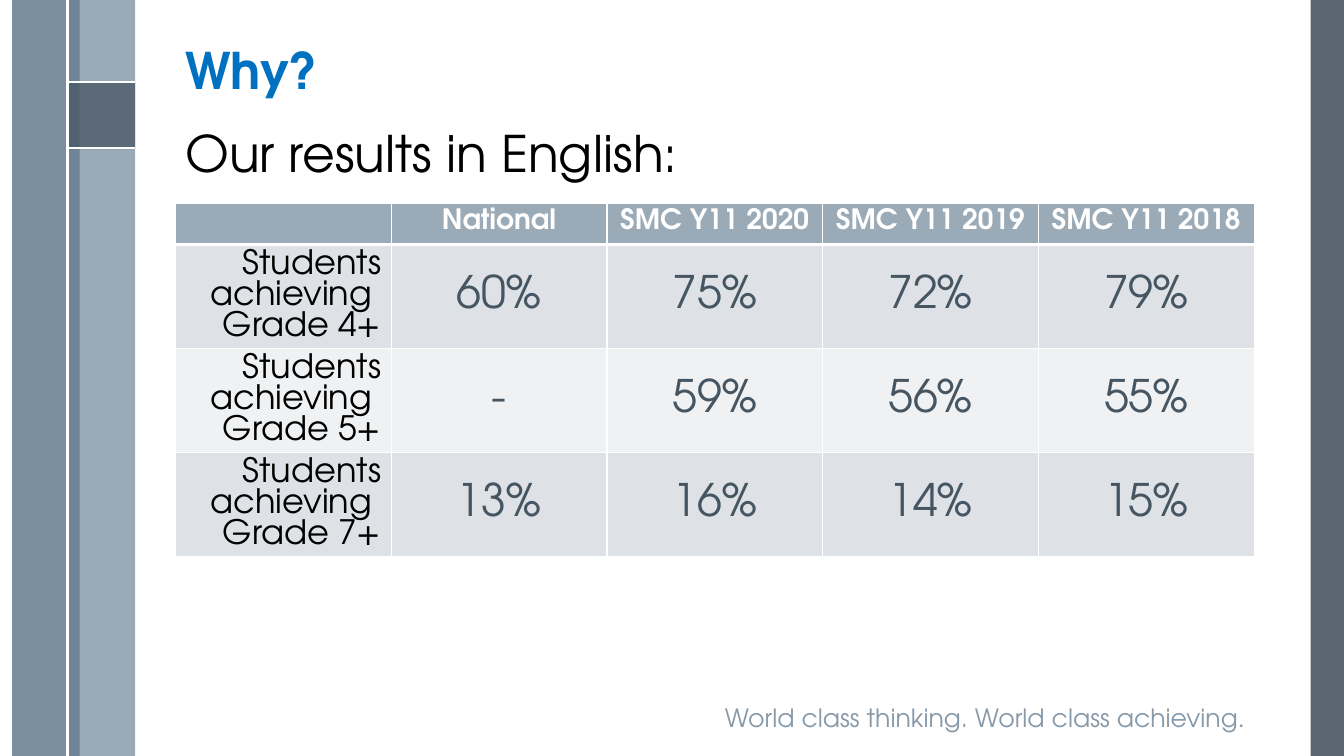
from typing import NamedTuple

from lxml import etree
from pptx import Presentation
from pptx.dml.color import RGBColor
from pptx.enum import shapes, text
from pptx.oxml import ns
from pptx.util import Inches, Pt

FONT = "TeX Gyre Adventor"
WHITE = RGBColor(0xFF, 0xFF, 0xFF)
BLACK = RGBColor(0, 0, 0)
BLUE = RGBColor(0x00, 0x70, 0xC0)
SLATE = RGBColor(0x47, 0x55, 0x62)
STEEL = RGBColor(0x6A, 0x80, 0x93)
MIST = RGBColor(0x9B, 0xAA, 0xB7)
MOTTO_GREY = RGBColor(0x87, 0x9A, 0xAA)
VALUE_GREY = RGBColor(0x46, 0x55, 0x62)
BAND_DARK = RGBColor(0xDE, 0xE2, 0xE6)
BAND_LIGHT = RGBColor(0xEF, 0xF1, 0xF3)

LEFT, WIDTH = 1.74, 10.7
HEADER_HEIGHT, ROW_HEIGHT = 0.36, 1.03


class Panel(NamedTuple):
    x: float
    y: float
    w: float
    h: float
    color: RGBColor
    opacity: int = 100


class Rule(NamedTuple):
    x1: float
    y1: float
    x2: float
    y2: float


class Style(NamedTuple):
    size: int
    color: RGBColor
    bold: bool = False
    align: text.PP_ALIGN = text.PP_ALIGN.LEFT


PANELS = [
    Panel(13, 0, 0.33, 7.5, SLATE, 90),
    Panel(0.67, 0, 0.67, 7.5, MIST),
    Panel(0.12, 0, 0.67, 7.5, STEEL, 88),
    Panel(0.67, 0.81, 0.67, 0.67, SLATE, 75),
]
RULES = [Rule(0.67, 0.81, 1.34, 0.81), Rule(0.67, 1.47, 1.34, 1.47), Rule(0.67, 0, 0.67, 7.5)]

HEADER = Style(20, WHITE, True, text.PP_ALIGN.CENTER)
ROW_LABEL = Style(24, BLACK, align=text.PP_ALIGN.RIGHT)
VALUE = Style(32, VALUE_GREY, align=text.PP_ALIGN.CENTER)

RESULTS = [
    ["", "National", "SMC Y11 2020", "SMC Y11 2019", "SMC Y11 2018"],
    ["Students achieving \nGrade 4+", "60%", "75%", "72%", "79%"],
    ["Students achieving \nGrade 5+", "-", "59%", "56%", "55%"],
    ["Students achieving \nGrade 7+", "13%", "16%", "14%", "15%"],
]


def add_panel(s, panel: Panel) -> None:
    sp = s.shapes.add_shape(shapes.MSO_SHAPE.RECTANGLE, *map(Inches, panel[:4]))
    sp.shadow.inherit = False
    sp.line.fill.background()
    sp.fill.solid()
    sp.fill.fore_color.rgb = panel.color
    if panel.opacity < 100:
        color = sp._element.spPr.find(ns.qn("a:solidFill"))[0]
        etree.SubElement(color, ns.qn("a:alpha"), val=str(panel.opacity * 1000))


def add_rule(s, rule: Rule) -> None:
    line = s.shapes.add_connector(shapes.MSO_CONNECTOR.STRAIGHT, *map(Inches, rule))
    line.line.color.rgb = WHITE
    line.line.width = Pt(1.5)
    etree.SubElement(line._element.spPr, ns.qn("a:effectLst"))


def set_text(tf, content: str, style: Style) -> None:
    tf.text = content
    for p in tf.paragraphs:
        p.alignment = style.align
        for r in p.runs:
            r.font.name = FONT
            r.font.size = Pt(style.size)
            r.font.bold = style.bold
            r.font.color.rgb = style.color


def set_line(sp, top: float, content: str, style: Style, left: float = LEFT,
             width: float = WIDTH, height: float = 0.76, anchor=text.MSO_ANCHOR.BOTTOM) -> None:
    """Place a shape and give it one tightly spaced line of text."""
    sp.left, sp.top, sp.width, sp.height = map(Inches, (left, top, width, height))
    tf = sp.text_frame
    tf.word_wrap = True
    tf.auto_size = text.MSO_AUTO_SIZE.NONE
    tf.vertical_anchor = anchor
    set_text(tf, content, style)
    tf.paragraphs[0].line_spacing = 0.9


def set_borders(cell, top: float, bottom: float) -> None:
    tc_pr = cell._tc.get_or_add_tcPr()
    for side, width in zip("LRTB", (1, 1, top, bottom)):
        ln = etree.SubElement(tc_pr, ns.qn(f"a:ln{side}"), w=str(Pt(width)))
        fill = etree.SubElement(ln, ns.qn("a:solidFill"))
        etree.SubElement(fill, ns.qn("a:srgbClr"), val=str(WHITE))


def add_results(s) -> None:
    n_rows, n_cols = len(RESULTS), len(RESULTS[0])
    height = HEADER_HEIGHT + ROW_HEIGHT * (n_rows - 1)
    table = s.shapes.add_table(n_rows, n_cols, *map(Inches, (LEFT, 2.02, WIDTH, height))).table
    for col in table.columns:
        col.width = Inches(WIDTH / n_cols)
    for i, row in enumerate(RESULTS):
        table.rows[i].height = Inches(ROW_HEIGHT if i else HEADER_HEIGHT)
        band = MIST if i == 0 else BAND_DARK if i % 2 else BAND_LIGHT
        for j, content in enumerate(row):
            cell = table.cell(i, j)
            set_borders(cell, top=3 if i == 1 else 1, bottom=1 if i else 3)
            cell.fill.solid()
            cell.fill.fore_color.rgb = band
            style = HEADER if i == 0 else VALUE if j else ROW_LABEL
            if style is VALUE:
                cell.vertical_anchor = text.MSO_ANCHOR.MIDDLE
            set_text(cell.text_frame, content, style)


def main() -> None:
    prs = Presentation()
    prs.slide_width, prs.slide_height = Inches(13.33), Inches(7.5)
    s = prs.slides.add_slide(prs.slide_layouts[5])

    for panel in PANELS:
        add_panel(s, panel)
    for rule in RULES:
        add_rule(s, rule)

    set_line(s.shapes.title, 0.29, "Why?", Style(36, BLUE, True))
    motto = s.shapes.add_textbox(0, 0, 0, 0)
    motto_style = Style(18, MOTTO_GREY)
    set_line(motto, 6.95, "World class thinking. World class achieving", motto_style,
             left=7.09, width=5.67, height=0.41, anchor=text.MSO_ANCHOR.TOP)
    stop = motto.text_frame.paragraphs[0].add_run()
    stop.text = "."
    stop.font.name = "Roboto"
    stop.font.size = Pt(motto_style.size)
    stop.font.color.rgb = motto_style.color

    add_results(s)
    subtitle = s.shapes.add_textbox(0, 0, 0, 0)
    set_line(subtitle, 1.11, "Our results in English:", Style(36, BLACK))
    prs.save("out.pptx")


if __name__ == "__main__":
    main()
